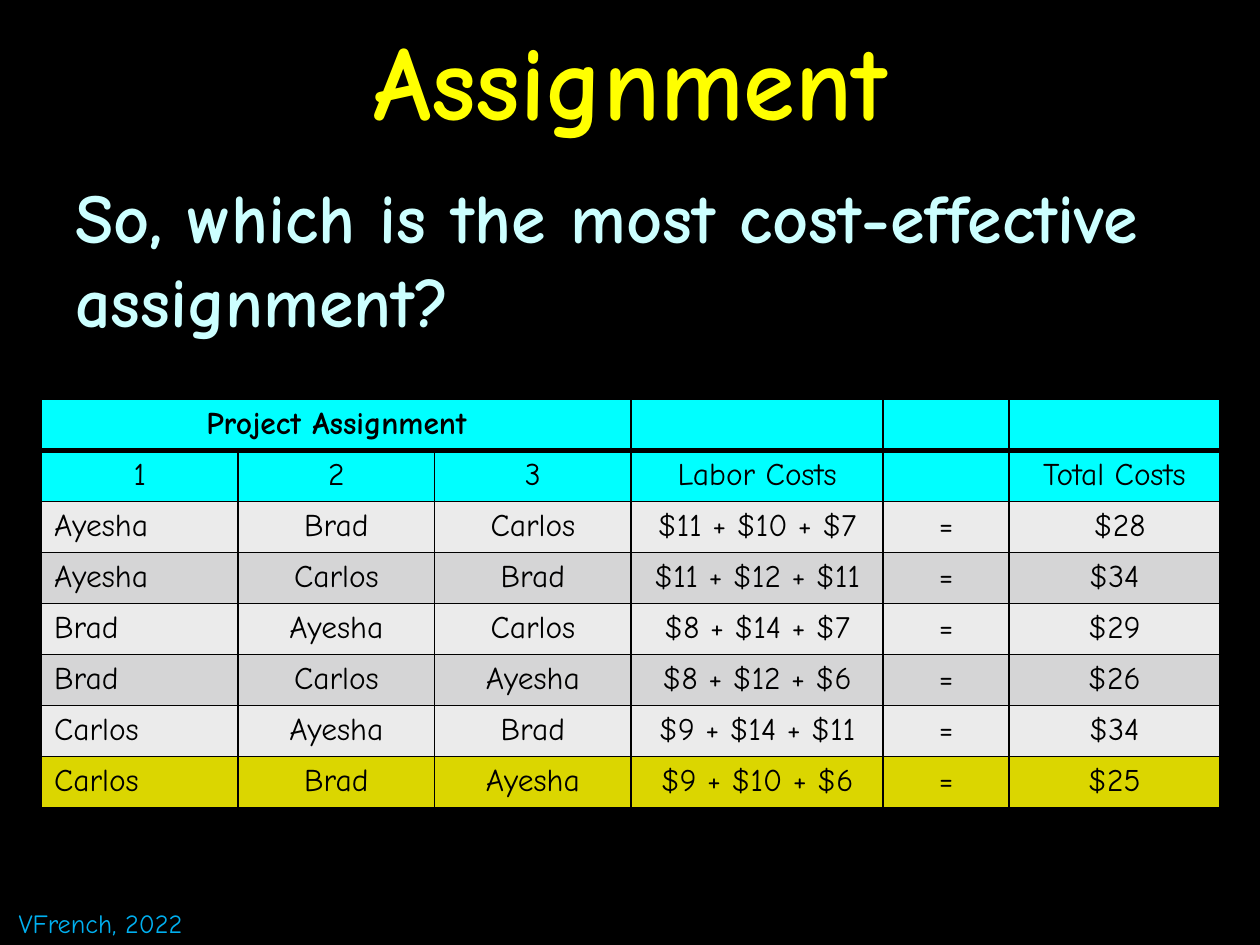
from dataclasses import dataclass

from lxml import etree
from pptx import Presentation
from pptx.dml.color import RGBColor
from pptx.enum.text import MSO_ANCHOR, MSO_AUTO_SIZE, PP_ALIGN
from pptx.oxml.ns import qn
from pptx.util import Inches, Pt

LEFT, MID = PP_ALIGN.LEFT, PP_ALIGN.CENTER
TOP, CORE = MSO_ANCHOR.TOP, MSO_ANCHOR.MIDDLE
FIT, FIXED = MSO_AUTO_SIZE.SHAPE_TO_FIT_TEXT, MSO_AUTO_SIZE.NONE


@dataclass(frozen=True)
class Theme:
    font: str = "Comic Neue"
    back: str = "000000"
    title: str = "FFFF00"
    body: str = "CCFFFF"
    note: str = "00B0F0"
    ink: str = "000000"
    head: str = "00FFFF"
    bands: tuple = ("EBEBEB", "D5D5D6")
    best: str = "DBD600"
    title_pt: int = 60
    body_pt: int = 40
    cell_pt: int = 18
    note_pt: int = 15
    thin: int = 1
    thick: int = 3


@dataclass(frozen=True)
class Label:
    text: str
    box: tuple
    size: int
    color: str
    bold: bool = False
    align: PP_ALIGN = LEFT
    anchor: MSO_ANCHOR = TOP
    fit: MSO_AUTO_SIZE = FIXED
    wrap: bool = True


THEME = Theme()

LABELS = (
    Label("Assignment", (0, 0, 10, 1.25), THEME.title_pt, THEME.title,
          True, MID, CORE),
    Label("So, which is the most cost-effective assignment?",
          (0.5, 1.33, 9, 6.17), THEME.body_pt, THEME.body, True),
    Label("VFrench, 2022", (0.05, 7.15, 1.7, 0.35), THEME.note_pt, THEME.note,
          fit=FIT, wrap=False),
)

# Table content and layout
ROWS = (
    ("Project Assignment", "", "", "", "", ""),
    ("1", "2", "3", "Labor Costs", "", "Total Costs"),
    ("Ayesha", "Brad", "Carlos", "$11 + $10 + $7", "=", " $28"),
    ("Ayesha", "Carlos", "Brad", "$11 + $12 + $11", "=", "$34"),
    ("Brad", "Ayesha", "Carlos", "$8 + $14 + $7", "=", "$29"),
    ("Brad", "Carlos", "Ayesha", "$8 + $12 + $6", "=", "$26"),
    ("Carlos", "Ayesha", "Brad", "$9 + $14 + $11", "=", "$34"),
    ("Carlos", "Brad", "Ayesha", "$9 + $10 + $6", "=", "$25"),
)
WIDTHS = (1.56, 1.56, 1.56, 2, 1, 1.67)
GRID = (0.33, 3.17, 9.33, 3.24)
HEADS = 2


def set_all(item, values: dict) -> None:
    for name, value in values.items():
        setattr(item, name, value)


def write(para, text: str, size: int, color: str, bold: bool,
          align: PP_ALIGN) -> None:
    para.alignment = align
    run = para.add_run()
    run.text = text
    set_all(run.font, {"name": THEME.font, "size": Pt(size), "bold": bold})
    run.font.color.rgb = RGBColor.from_string(color)


def add_label(slide, label: Label) -> None:
    frame = slide.shapes.add_textbox(*map(Inches, label.box)).text_frame
    set_all(frame, {"word_wrap": label.wrap, "auto_size": label.fit,
                    "vertical_anchor": label.anchor})
    write(frame.paragraphs[0], label.text, label.size, label.color,
          label.bold, label.align)


def add_edges(cell, row: int) -> None:
    """Border every side; the rule below the top row is thick."""
    props = cell._tc.get_or_add_tcPr()
    widths = {"lnL": THEME.thin, "lnR": THEME.thin,
              "lnT": THEME.thick if row == 1 else THEME.thin,
              "lnB": THEME.thick if row == 0 else THEME.thin}
    for index, (tag, width) in enumerate(widths.items()):
        line = etree.Element(qn(f"a:{tag}"), w=str(Pt(width)))
        fill = etree.SubElement(line, qn("a:solidFill"))
        etree.SubElement(fill, qn("a:srgbClr"), val=THEME.ink)
        props.insert(index, line)


def row_fill(row: int) -> str:
    if row < HEADS:
        return THEME.head
    if row == len(ROWS) - 1:
        return THEME.best
    return THEME.bands[(row - HEADS) % len(THEME.bands)]


def add_grid(slide) -> None:
    table = slide.shapes.add_table(
        len(ROWS), len(WIDTHS), *map(Inches, GRID)).table
    for column, width in zip(table.columns, WIDTHS):
        column.width = Inches(width)
    for row, texts in enumerate(ROWS):
        table.rows[row].height = Inches(GRID[3] / len(ROWS))
        for col, text in enumerate(texts):
            cell = table.cell(row, col)
            cell.fill.solid()
            cell.fill.fore_color.rgb = RGBColor.from_string(row_fill(row))
            add_edges(cell, row)
            if text:
                align = LEFT if col == 0 and row >= HEADS else MID
                write(cell.text_frame.paragraphs[0], text, THEME.cell_pt,
                      THEME.ink, row == 0, align)
    table.cell(0, 0).merge(table.cell(0, 2))


def main() -> None:
    deck = Presentation()
    set_all(deck, {"slide_width": Inches(10), "slide_height": Inches(7.5)})
    slide = deck.slides.add_slide(deck.slide_layouts[6])
    # Background
    back = slide.background.fill
    back.solid()
    back.fore_color.rgb = RGBColor.from_string(THEME.back)
    # Text and table
    for label in LABELS:
        add_label(slide, label)
    add_grid(slide)
    deck.save("out.pptx")


if __name__ == "__main__":
    main()
